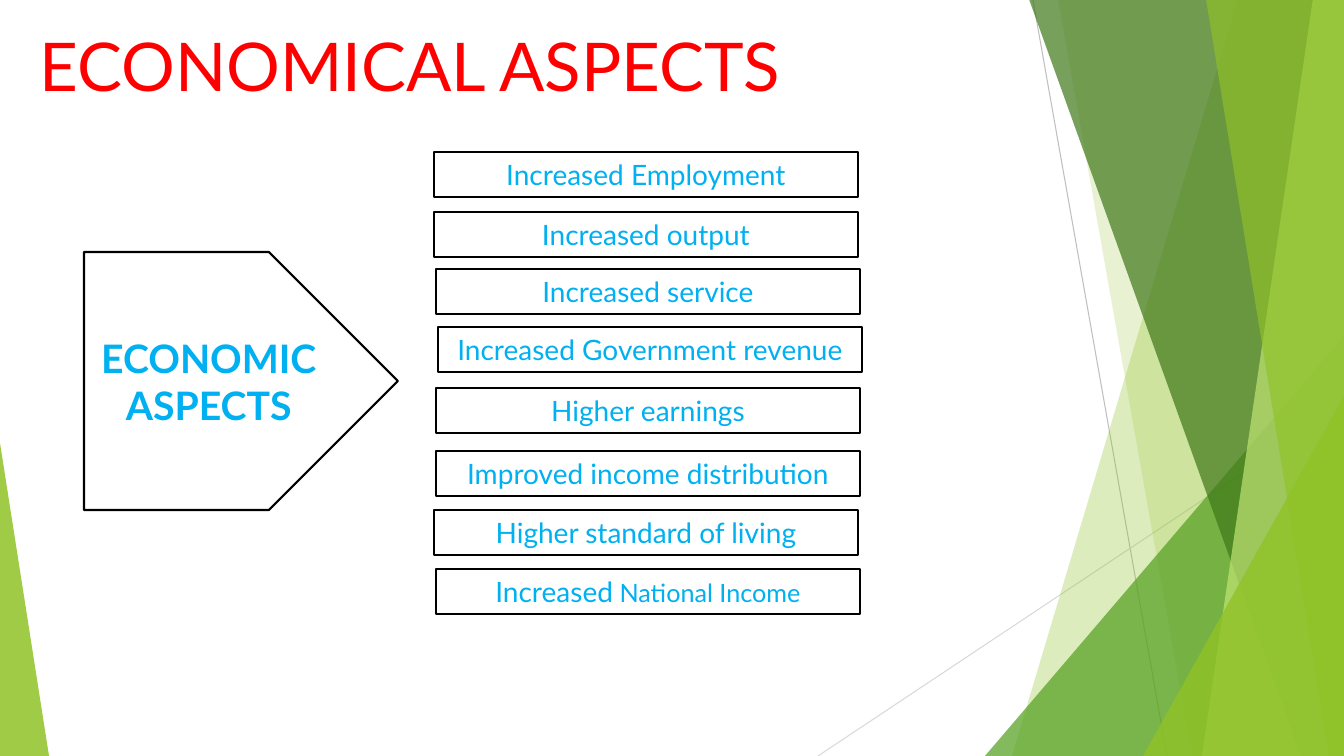
"""Build the Economical Aspects slide: a pentagon, eight benefit boxes and green facets."""
import pptx
import pptx.dml.color
import pptx.enum.shapes
import pptx.enum.text
import pptx.oxml
import pptx.oxml.ns
import pptx.util

PX = 914400 / 100.8
WIDTH, HEIGHT = 1344, 756
SHAPES = pptx.enum.shapes.MSO_SHAPE


def px(*lengths):
    return [pptx.util.Emu(round(length * PX)) for length in lengths]


def color(hex_string):
    return pptx.dml.color.RGBColor.from_string(hex_string)


presentation = pptx.Presentation()
presentation.slide_width, presentation.slide_height = px(WIDTH, HEIGHT)
slide = presentation.slides.add_slide(presentation.slide_layouts[6])

for ends, line_color in [((1033, 0, 1167, 756), "BFBFBF"), ((1344, 406, 818, 756), "D9D9D9")]:
    connector = slide.shapes.add_connector(pptx.enum.shapes.MSO_CONNECTOR.STRAIGHT, *px(*ends))
    connector.line.color.rgb = color(line_color)
    connector.line.width = pptx.util.Pt(0.75)
    properties = connector._element.spPr
    properties.append(pptx.oxml.parse_xml(f'<a:effectLst {pptx.oxml.ns.nsdecls("a")}/>'))

facets = [
    ("band", (1238, 1012), "90C226", 30),
    ("band", (1058, 1192), "90C226", 20),
    ("triangle", (985, 336, 359, 420, 1), "54A021", 72),
    ("band", (1029, 1301), "3F7819", 70),
    ("band", (1313, 1202), "C0E474", 70),
    ("band", (1206, 1329), "90C226", 65),
    ("triangle", (1143, 396, 201, 360, 1), "90C226", 80),
    ("triangle", (0, 443, 49, 313, 0), "90C226", 85),
]
for kind, geometry, fill, opacity in facets:
    if kind == "band":
        top_left, bottom_left = geometry
        builder = slide.shapes.build_freeform(top_left, -1, scale=PX)
        builder.add_line_segments([(WIDTH, -1), (WIDTH, HEIGHT), (bottom_left, HEIGHT)], close=True)
        shape = builder.convert_to_shape()
    else:
        *box, apex = geometry
        shape = slide.shapes.add_shape(SHAPES.ISOSCELES_TRIANGLE, *px(*box))
        shape.adjustments[0] = apex
    shape.shadow.inherit = False
    shape.line.fill.background()
    shape.fill.solid()
    shape.fill.fore_color.rgb = color(fill)
    fill_color = shape.fill._xPr.find(".//" + pptx.oxml.ns.qn("a:srgbClr"))
    fill_color.append(pptx.oxml.parse_xml(
        f'<a:alpha {pptx.oxml.ns.nsdecls("a")} val="{opacity * 1000}"/>'))

title = slide.shapes.add_textbox(*px(30, 19, 948, 145))
title.text_frame.word_wrap = True
title.text_frame.text = "ECONOMICAL ASPECTS"
title_font = title.text_frame.paragraphs[0].runs[0].font
title_font.name, title_font.size = "Lato", pptx.util.Pt(48)
title_font.color.rgb = color("FF0000")

benefits = [
    (434, 152, ["Increased Employment"]),
    (434, 212, ["Increased output"]),
    (436, 269, ["Increased service"]),
    (438, 327, ["Increased Government revenue"]),
    (436, 388, ["Higher earnings"]),
    (436, 451, ["Improved income distribution"]),
    (434, 510, ["Higher standard of living"]),
    (436, 569, ["Increased", " National Income"]),
]
boxes = [(SHAPES.RECTANGLE, (left, top, 424, 45), texts, (20, 18), False)
         for left, top, texts in benefits]
boxes.append((SHAPES.PENTAGON, (84, 252, 314, 258), ["ECONOMIC ASPECTS"], (28,), True))
for preset, box, texts, sizes, bold in boxes:
    shape = slide.shapes.add_shape(preset, *px(*box))
    shape.shadow.inherit = False
    shape.fill.solid()
    shape.fill.fore_color.rgb = color("FFFFFF")
    shape.line.color.rgb = color("000000")
    shape.line.width = pptx.util.Pt(1.5)
    shape.text_frame.word_wrap = True
    shape.text_frame.vertical_anchor = pptx.enum.text.MSO_ANCHOR.MIDDLE
    paragraph = shape.text_frame.paragraphs[0]
    paragraph.alignment = pptx.enum.text.PP_ALIGN.CENTER
    for text, size in zip(texts, sizes):
        run = paragraph.add_run()
        run.text = text
        run.font.name, run.font.size, run.font.bold = "Lato", pptx.util.Pt(size), bold
        run.font.color.rgb = color("00B0F0")

presentation.save("out.pptx")
